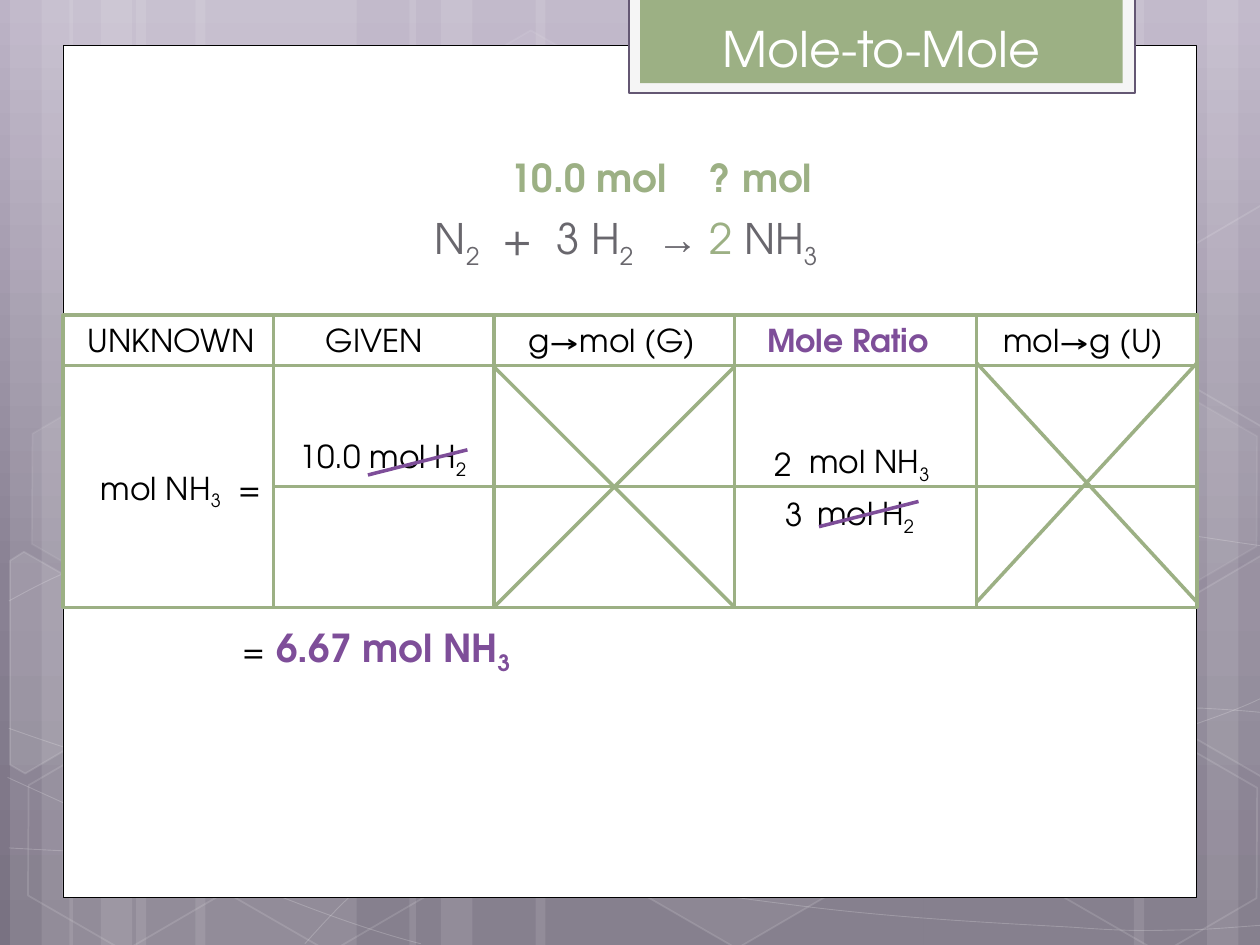
from copy import deepcopy

from lxml.etree import SubElement
from pptx import Presentation
from pptx.dml.color import RGBColor
from pptx.enum.shapes import MSO_CONNECTOR, MSO_SHAPE
from pptx.enum.text import MSO_ANCHOR, MSO_AUTO_SIZE, PP_ALIGN
from pptx.oxml.ns import qn
from pptx.util import Inches, Pt

FONT = "TeX Gyre Adventor"
WHITE = RGBColor(0xFF, 0xFF, 0xFF)
BLACK = RGBColor(0, 0, 0)
GREEN = RGBColor(0x9C, 0xB0, 0x84)
PURPLE = RGBColor(0x7E, 0x4E, 0x99)
GRAY = RGBColor(0x69, 0x67, 0x6D)
TAB_FILL = RGBColor(0xF5, 0xF5, 0xF5)
TAB_LINE = RGBColor(0x64, 0x57, 0x73)
BACKGROUND = [(0, RGBColor(0xBC, 0xB3, 0xC6)), (0.62, RGBColor(0x89, 0x81, 0x93)),
              (1, RGBColor(0x79, 0x72, 0x82))]

# left, width
STRIPES = [(1.08, 1.75), (0.08, 0.5), (0.33, 0.83), (1.55, 1.75), (0.55, 0.5), (0.8, 0.83),
           (7.33, 1.75), (9.58, 0.5), (9, 0.83), (4.25, 3.08), (3.25, 0.5), (3.5, 0.83)]
# start point, then three points (control, control, end) for each curve
WAVES = [
    [(0.07, 6.73), (0.61, 6.76), (1.15, 6.79), (1.9, 6.78), (2.65, 6.77), (3.58, 6.75),
     (4.58, 6.65), (5.58, 6.55), (7, 6.36), (7.92, 6.17), (8.83, 5.98), (9.77, 5.68),
     (10.07, 5.51)],
    [(0.07, 4.77), (0.36, 4.61), (0.65, 4.46), (1.21, 4.31), (1.78, 4.16), (2.59, 3.94),
     (3.47, 3.87), (4.36, 3.8), (5.44, 3.79), (6.54, 3.87), (7.64, 3.95), (9.47, 4.26),
     (10.07, 4.34)],
    [(0.06, 6.17), (1.27, 6.72), (2.47, 7.27), (3.34, 7.49)],
    [(0.07, 5.78), (0.38, 5.89), (0.7, 6), (1.28, 6.16), (1.86, 6.31), (2.73, 6.56),
     (3.57, 6.73), (4.4, 6.9), (5.45, 7.08), (6.28, 7.18), (7.11, 7.29), (8, 7.33),
     (8.53, 7.36), (9.05, 7.4), (9.19, 7.38), (9.45, 7.38), (9.71, 7.37), (9.89, 7.35),
     (10.07, 7.34)],
    [(2.42, 7.49), (2.6, 7.29), (2.78, 7.09), (3.02, 6.91), (3.26, 6.73), (3.6, 6.53),
     (3.88, 6.39), (4.16, 6.25), (4.33, 6.19), (4.7, 6.09), (5.06, 5.99), (5.73, 5.85),
     (6.08, 5.78), (6.44, 5.71), (6.49, 5.71), (6.8, 5.69), (7.11, 5.66), (7.6, 5.63),
     (7.94, 5.62), (8.29, 5.61), (8.86, 5.62), (9.53, 5.62), (9.71, 5.63), (9.88, 5.64),
     (10.06, 5.66)],
]
# left, top, fill opacity, line opacity
HEXAGONS = [(3.34, 0.36, 4, 8), (4.97, 5.89, 6, 12), (0.11, 5.91, 0, 12), (0.14, 3.12, 7, 8),
            (1.74, 5.92, 0, 12), (8.34, 5.93, 0, 12), (8.34, 3.14, 7, 8)]
# fill opacity, points
CUT_HEXAGONS = [
    (10, [(0.08, 4.45), (0.19, 4.38), (0.96, 4.82), (0.95, 5.7), (0.2, 6.14), (0.08, 6.07)]),
    (4, [(9.26, 4.85), (10.01, 4.41), (10.09, 4.46), (10.09, 6.13), (10.02, 6.17), (9.26, 5.73)]),
    (0, [(9.26, 2.07), (10.01, 1.63), (10.1, 1.68), (10.09, 3.35), (10.02, 3.39), (9.26, 2.95)]),
]
COLUMN_EDGES = [2.17, 3.92, 5.83, 7.75]
HEADER_TABS = [0.76, 2.37, 4.26, 6.13, 8]


def style(sp, fill=None, line=None, width=1, fill_alpha=100, line_alpha=100):
    sp.shadow.inherit = False
    if fill is None:
        sp.fill.background()
    else:
        sp.fill.solid()
        sp.fill.fore_color.rgb = fill
    if line is None:
        sp.line.fill.background()
    else:
        sp.line.color.rgb = line
        sp.line.width = Pt(width)
    for prefix, alpha in (("", fill_alpha), ("a:ln/", line_alpha)):
        for clr in sp._element.spPr.xpath(f"./{prefix}a:solidFill/a:srgbClr"):
            if alpha < 100:
                SubElement(clr, qn("a:alpha")).set("val", str(alpha * 1000))


def add_shape(slide, kind, box, **look):
    sp = slide.shapes.add_shape(kind, *map(Inches, box))
    style(sp, **look)
    return sp


def add_outline(slide, points, close, **look):
    start, *rest = [(Inches(x), Inches(y)) for x, y in points]
    builder = slide.shapes.build_freeform(*start)
    builder.add_line_segments(rest, close=close)
    sp = builder.convert_to_shape()
    style(sp, **look)
    return sp


def add_wave(slide, points):
    """Draw an open outline and turn every three line steps into one cubic curve."""
    sp = add_outline(slide, points, False, line=WHITE, width=0.5, line_alpha=20)
    steps = sp._element.spPr.xpath(".//a:lnTo")
    outline = steps[0].getparent()
    for i in range(0, len(steps), 3):
        curve = SubElement(outline, qn("a:cubicBezTo"))
        for step in steps[i:i + 3]:
            curve.append(step[0])
            outline.remove(step)


def add_line(slide, x1, y1, x2, y2, color=GREEN):
    line = slide.shapes.add_connector(MSO_CONNECTOR.STRAIGHT, *map(Inches, (x1, y1, x2, y2)))
    line.line.color.rgb = color
    line.line.width = Pt(2)
    SubElement(line._element.spPr, qn("a:effectLst"))
    return line


def write(tf, *runs, size=18, color=BLACK, bold=False, align=PP_ALIGN.CENTER):
    """Write runs, each a string or (string, overrides); _x_ marks a subscript."""
    p = tf.paragraphs[0]
    p.alignment = align
    for run in runs:
        text, own = (run, {}) if isinstance(run, str) else run
        for i, part in enumerate(text.split("_")):
            if not part:
                continue
            r = p.add_run()
            r.text = part
            r.font.name = own.get("font", FONT)
            r.font.size = Pt(own.get("size", size))
            r.font.bold = own.get("bold", bold)
            r.font.color.rgb = own.get("color", color)
            if i % 2:
                r._r.get_or_add_rPr().set("baseline", "-25000")


def add_text(slide, box, *runs, inset=0.05, **fmt):
    tf = slide.shapes.add_textbox(*map(Inches, box)).text_frame
    tf.word_wrap = True
    tf.margin_top = tf.margin_bottom = Inches(inset)
    write(tf, *runs, **fmt)


def paint_background(slide):
    fill = slide.background.fill
    fill.gradient()
    fill.gradient_angle = 270
    first = slide._element.find(".//" + qn("a:gs"))
    first.addnext(deepcopy(first))
    for stop, (position, color) in zip(fill.gradient_stops, BACKGROUND):
        stop.position = position
        stop.color.rgb = color


def add_decoration(slide):
    for left, width in STRIPES:
        add_shape(slide, MSO_SHAPE.RECTANGLE, (left, 0, width, 7.5), fill=WHITE, fill_alpha=10)
    for wave in WAVES:
        add_wave(slide, wave)
    for left, top, fill_alpha, line_alpha in HEXAGONS:
        sp = add_shape(slide, MSO_SHAPE.HEXAGON, (left, top, 1.75, 1.52), line=WHITE,
                       fill=WHITE if fill_alpha else None,
                       fill_alpha=fill_alpha, line_alpha=line_alpha)
        sp.adjustments[0] = 0.285
        sp.rotation = 30
    for alpha, points in CUT_HEXAGONS:
        add_outline(slide, points, True, fill=WHITE if alpha else None, line=WHITE,
                    fill_alpha=alpha, line_alpha=12)


def add_title(slide, text):
    add_shape(slide, MSO_SHAPE.RECTANGLE, (4.99, -0.02, 4.02, 0.76),
              fill=TAB_FILL, line=TAB_LINE, width=1.25)
    add_shape(slide, MSO_SHAPE.RECTANGLE, (5.08, -0.02, 3.83, 0.68), fill=GREEN)
    title = slide.shapes.title
    title.left, title.top, title.width, title.height = map(Inches, (5.08, 0.1, 3.83, 0.57))
    title.text_frame.auto_size = MSO_AUTO_SIZE.NONE
    title.text_frame.vertical_anchor = MSO_ANCHOR.TOP
    write(title.text_frame, text, size=28, color=WHITE)
    slide.shapes._spTree.append(title._element)  # in front of the tab


def add_conversion_grid(slide):
    body = add_shape(slide, MSO_SHAPE.RECTANGLE, (0.5, 2.9, 9, 1.92), line=GREEN, width=2)
    header = add_shape(slide, MSO_SHAPE.RECTANGLE, (0.5, 2.5, 9, 0.4), line=GREEN, width=2)
    write(header.text_frame, "\tUNKNOWN\tGIVEN\tg→mol (G)\t",
          ("Mole Ratio\t", dict(color=PURPLE, bold=True)), "mol→g (U)", align=PP_ALIGN.LEFT)
    tabs = SubElement(header.text_frame.paragraphs[0]._p.get_or_add_pPr(), qn("a:tabLst"))
    for position in HEADER_TABS:
        SubElement(tabs, qn("a:tab"), pos=str(Inches(position)), algn="ctr")
    for x in COLUMN_EDGES:
        add_line(slide, x, 2.5, x, 4.82)
    middle = add_line(slide, COLUMN_EDGES[0], 3.86, 9.5, 3.86)
    middle.end_connect(body, 3)


def add_cross(slide, left, top, right, bottom):
    add_line(slide, left, top, right, bottom)
    add_line(slide, right, top, left, bottom)


def main():
    prs = Presentation()
    prs.slide_width, prs.slide_height = Inches(10), Inches(7.5)
    slide = prs.slides.add_slide(prs.slide_layouts[5])
    paint_background(slide)
    add_decoration(slide)
    add_shape(slide, MSO_SHAPE.RECTANGLE, (0.5, 0.36, 9, 6.76), fill=WHITE, line=BLACK, width=0.5)
    add_conversion_grid(slide)
    add_title(slide, "Mole-to-Mole")
    add_text(slide, (0.67, 3.67, 1.5, 0.4), "mol NH_3_  =", align=PP_ALIGN.RIGHT)
    add_text(slide, (2.25, 3.42, 1.58, 0.4), "10.0 mol H_2")
    add_cross(slide, 3.92, 2.91, 5.83, 4.82)
    add_text(slide, (6.08, 3.87, 1.58, 0.4), "mol H_2")
    add_text(slide, (1.9, 1.64, 6.14, 0.5), "N_2_  +  3 H_2_  ",
             ("→ ", dict(font="Times New Roman")), ("2", dict(color=GREEN)), " NH_3",
             size=24, color=GRAY)
    add_text(slide, (5.5, 1.17, 1.08, 0.47), "? mol", size=22, color=GREEN, bold=True)
    add_text(slide, (3.92, 1.17, 1.5, 0.47), "10.0 mol", size=22, color=GREEN, bold=True)
    add_text(slide, (6.11, 3.46, 1.58, 0.4), "mol NH_3")
    for left, top in ((2.92, 3.57), (6.5, 3.98)):
        add_line(slide, left, top + 0.2, left + 0.79, top, PURPLE)
    add_cross(slide, 7.75, 2.88, 9.5, 4.78)
    add_text(slide, (1.83, 4.85, 2.33, 0.57), ("=", dict(size=18)), " ",
             ("6.67 mol NH_3", dict(color=PURPLE, bold=True)),
             inset=0.1, size=22, align=PP_ALIGN.LEFT)
    add_text(slide, (6.08, 3.93, 0.44, 0.3), "3", inset=0)
    add_text(slide, (6, 3.53, 0.44, 0.3), "2", inset=0)
    prs.save("out.pptx")


if __name__ == "__main__":
    main()
